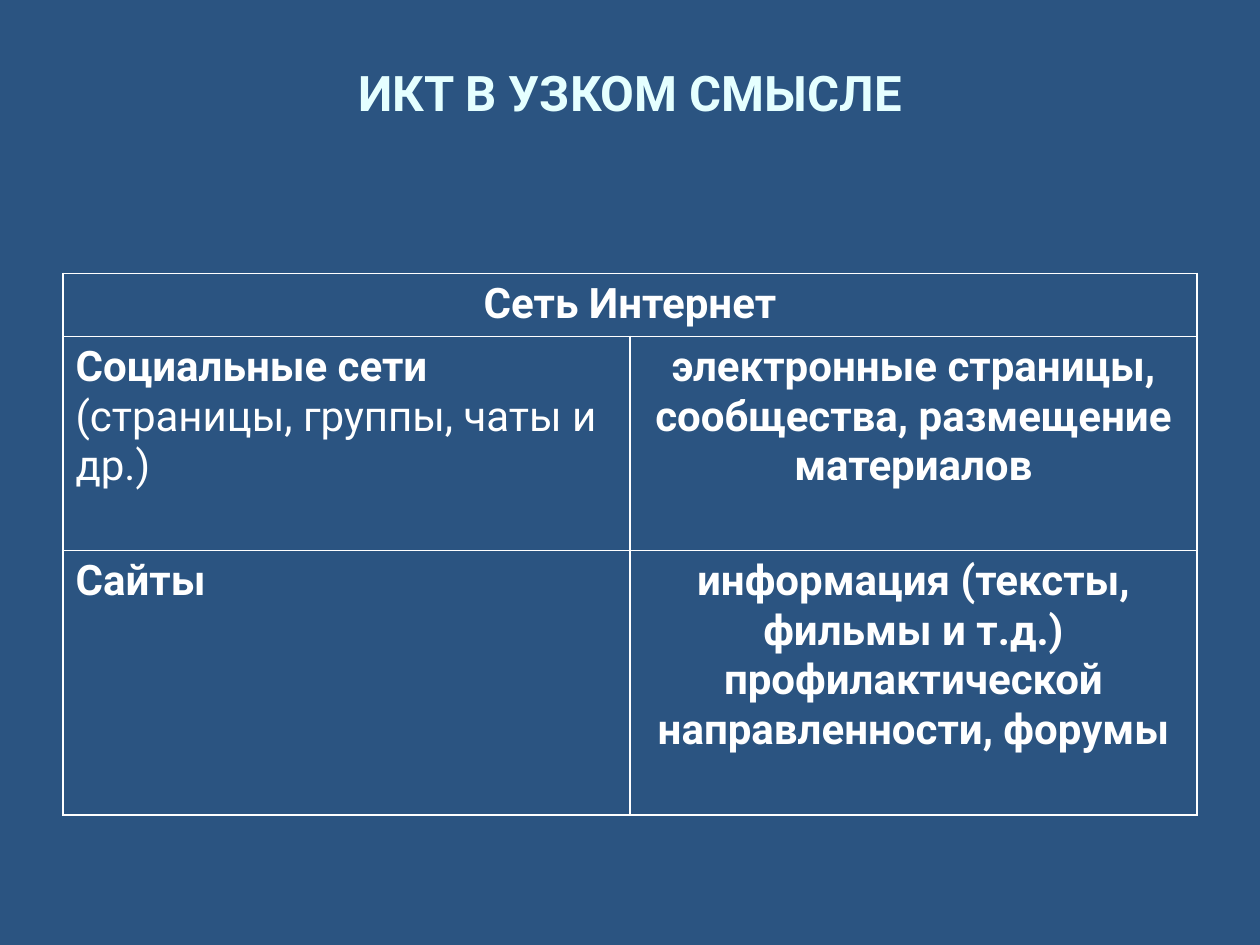
from lxml.etree import SubElement
from pptx import Presentation
from pptx.dml.color import RGBColor
from pptx.enum.text import MSO_ANCHOR, PP_ALIGN
from pptx.oxml.ns import qn
from pptx.util import Inches, Pt

WIDTH, HEIGHT = 10, 7.5
MARGIN = 0.05 * WIDTH
CONTENT_WIDTH = WIDTH - 2 * MARGIN
ROW_HEIGHTS = [0.5, 1.7, 2.1]
HANGING = 0.38
WHITE = "FFFFFF"

HEADING = [("Сеть Интернет", True)]
RESOURCES = [
    ([("Социальные сети ", True), ("(страницы, группы, чаты и др.)", False)], 0,
     "электронные страницы, сообщества, размещение материалов"),
    ([("Сайты", True)], HANGING,
     "информация (тексты, фильмы и т.д.) профилактической направленности, форумы"),
]


def color(hex_code):
    return RGBColor.from_string(hex_code)


def write(frame, runs, size, hex_code, align, hanging=0):
    paragraph = frame.paragraphs[0]
    paragraph.alignment = align
    if hanging:
        properties = paragraph._p.get_or_add_pPr()
        properties.set("marL", str(Inches(hanging)))
        properties.set("indent", str(-Inches(hanging)))
    for text, bold in runs:
        run = paragraph.add_run()
        run.text = text
        run.font.name = "Roboto"
        run.font.size = Pt(size)
        run.font.bold = bold
        run.font.color.rgb = color(hex_code)


def outline(cell):
    properties = cell._tc.get_or_add_tcPr()
    for side in ("lnL", "lnR", "lnT", "lnB"):
        border = SubElement(properties, qn(f"a:{side}"), w=str(Pt(1)))
        fill = SubElement(border, qn("a:solidFill"))
        SubElement(fill, qn("a:srgbClr"), val=WHITE)
    cell.fill.background()


def add_title(slide):
    title = slide.shapes.add_textbox(
        Inches(MARGIN), Inches(0.42), Inches(CONTENT_WIDTH), Inches(0.62))
    title.text_frame.word_wrap = True
    title.text_frame.vertical_anchor = MSO_ANCHOR.MIDDLE
    write(title.text_frame, [("ИКТ В УЗКОМ СМЫСЛЕ", True)], 28, "E5FFFF", PP_ALIGN.CENTER)


def add_resources(slide):
    table = slide.shapes.add_table(
        len(ROW_HEIGHTS), 2, Inches(MARGIN), Inches(2.17),
        Inches(CONTENT_WIDTH), Inches(sum(ROW_HEIGHTS))).table
    table.first_row = table.horz_banding = False
    for row, height in zip(table.rows, ROW_HEIGHTS):
        row.height = Inches(height)
    for cell in table.iter_cells():
        outline(cell)
    heading = table.cell(0, 0)
    heading.merge(table.cell(0, 1))
    write(heading.text_frame, HEADING, 24, WHITE, PP_ALIGN.CENTER, HANGING)
    for row, (resource, hanging, content) in enumerate(RESOURCES, 1):
        write(table.cell(row, 0).text_frame, resource, 24, WHITE, PP_ALIGN.LEFT, hanging)
        write(table.cell(row, 1).text_frame, [(content, True)], 24, WHITE, PP_ALIGN.CENTER)


def main():
    presentation = Presentation()
    presentation.slide_width = Inches(WIDTH)
    presentation.slide_height = Inches(HEIGHT)
    slide = presentation.slides.add_slide(presentation.slide_layouts[6])
    slide.background.fill.solid()
    slide.background.fill.fore_color.rgb = color("2B5481")
    add_resources(slide)
    add_title(slide)
    presentation.save("out.pptx")


if __name__ == "__main__":
    main()
